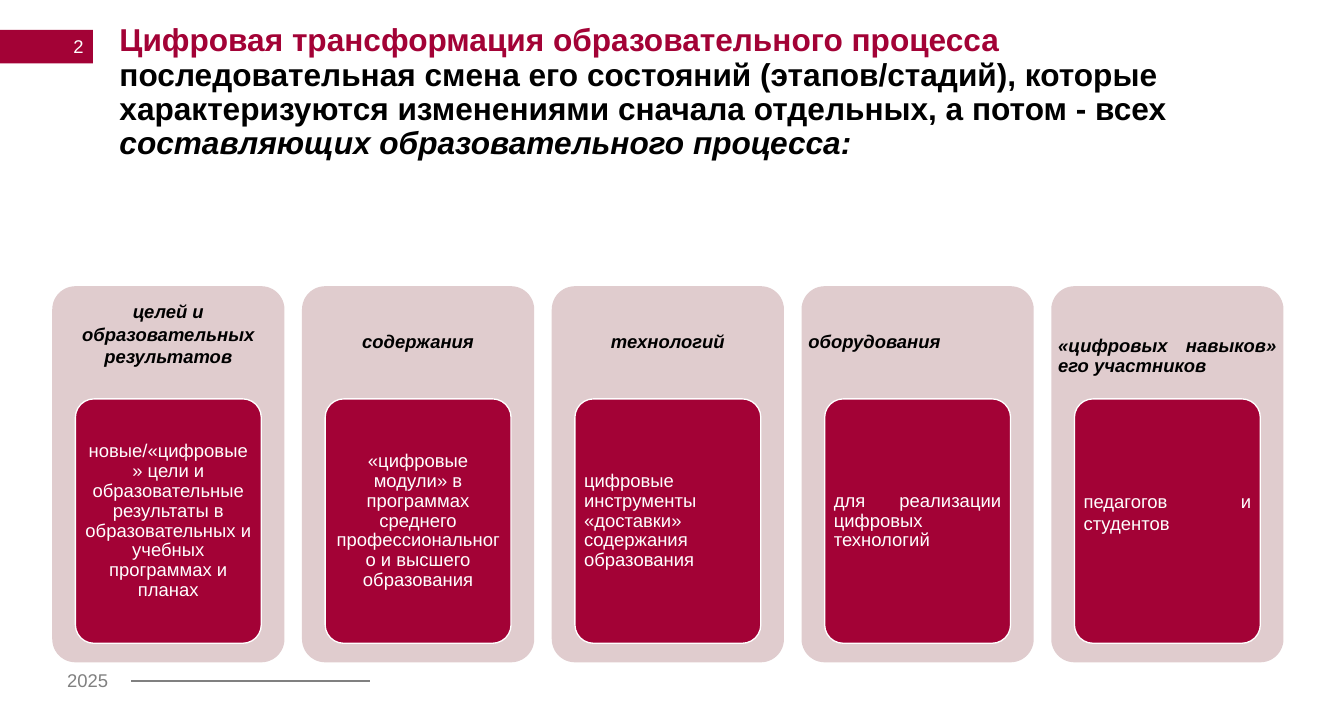
import pptx
import pptx.util
import pptx.dml.color
import pptx.enum.shapes
import pptx.enum.text
import pptx.oxml.xmlchemy

Cm = pptx.util.Cm
Pt = pptx.util.Pt
SHAPES = pptx.enum.shapes.MSO_SHAPE
ALIGN = pptx.enum.text.PP_ALIGN
ANCHOR = pptx.enum.text.MSO_ANCHOR
CRIMSON, ROSE, GREY, BLACK, WHITE = "A30236", "E0CCCE", "808080", "000000", "FFFFFF"


def rgb(value):
    return pptx.dml.color.RGBColor.from_string(value)


def write(owner, runs, align, spacing, margins, anchor=ANCHOR.MIDDLE):
    frame = owner.text_frame
    left, top, right, bottom = [Cm(margin) for margin in margins]
    layout = {"word_wrap": True, "auto_size": pptx.enum.text.MSO_AUTO_SIZE.NONE,
              "vertical_anchor": anchor, "margin_left": left, "margin_top": top,
              "margin_right": right, "margin_bottom": bottom}
    for key, value in layout.items():
        setattr(frame, key, value)
    paragraph = frame.paragraphs[0]
    for key, value in {"alignment": align, "line_spacing": spacing, "space_before": Pt(0)}.items():
        setattr(paragraph, key, value)
    for text, colour, style in runs:
        run = paragraph.add_run()
        run.text = text
        run.font.color.rgb = rgb(colour)
        for key, value in {"name": "Arial", "size": Pt(14), **style}.items():
            setattr(run.font, key, value)


deck = pptx.Presentation()
deck.slide_width, deck.slide_height = Cm(36), Cm(19)
slide = deck.slides.add_slide(deck.slide_layouts[5])
shapes = slide.shapes

number_bar = shapes.add_shape(SHAPES.RECTANGLE, 0, Cm(0.8), Cm(2.49), Cm(0.9))
number_bar.shadow.inherit = False
number_bar.fill.solid()
number_bar.fill.fore_color.rgb = rgb(CRIMSON)
number_bar.line.fill.background()
write(number_bar, [("2", WHITE, {})], ALIGN.RIGHT, 1.0, (0.25, 0, 0.25, 0))

year = shapes.add_textbox(Cm(1.55), Cm(17.81), Cm(1.7), Cm(0.86))
write(year, [("2025", GREY, {})], ALIGN.LEFT, 1.0, (0.25, 0.13, 0.2, 0.13), ANCHOR.TOP)

year_rule = shapes.add_connector(pptx.enum.shapes.MSO_CONNECTOR.STRAIGHT,
                                 Cm(3.51), Cm(18.26), Cm(9.91), Cm(18.26))
year_rule.line.color.rgb = rgb(GREY)
year_rule.line.width = Pt(1.5)
year_rule._element.spPr.append(pptx.oxml.xmlchemy.OxmlElement("a:effectLst"))

definition = shapes.title
for key, value in {"left": 3.2, "top": 0.66, "width": 28.58, "height": 2.44}.items():
    setattr(definition, key, Cm(value))
bold = {"size": Pt(24), "bold": True}
write(definition, [
    ("Цифровая трансформация образовательного процесса ", CRIMSON, bold),
    ("последовательная смена его состояний (этапов/стадий), которые характеризуются "
     "изменениями сначала отдельных, а потом - всех ", BLACK, bold),
    ("составляющих образовательного процесса:", BLACK, {**bold, "italic": True}),
], ALIGN.LEFT, 0.9, (0, 0, 0, 0), ANCHOR.TOP)

components = [
    {"heading": "целей и образовательных результатов", "heading_align": ALIGN.CENTER,
     "heading_spacing": 1.0, "heading_lift": 0.47,
     "change": "новые/«цифровые» цели и образовательные результаты в образовательных "
               "и учебных программах и планах", "change_align": ALIGN.CENTER},
    {"heading": "содержания", "heading_align": ALIGN.CENTER,
     "change": "«цифровые модули» в программах среднего профессионального "
               "и высшего образования", "change_align": ALIGN.CENTER},
    {"heading": "технологий", "heading_align": ALIGN.CENTER,
     "change": "цифровые инструменты «доставки» содержания образования"},
    {"heading": "оборудования",
     "change": "для реализации цифровых технологий"},
    {"heading": "«цифровых навыков» его участников", "heading_drop": 0.74,
     "change": "педагогов и студентов", "change_spacing": 1.0, "change_lift": 0.48},
]

for index, component in enumerate(components):
    left = 1.4 + 6.69 * index
    card = shapes.add_shape(SHAPES.ROUNDED_RECTANGLE, Cm(left), Cm(7.67), Cm(6.22), Cm(10.08))
    panel = shapes.add_shape(SHAPES.ROUNDED_RECTANGLE, Cm(left + 0.62), Cm(10.69), Cm(4.98), Cm(6.55))
    for box, fill in ((card, ROSE), (panel, CRIMSON)):
        box.shadow.inherit = False
        box.adjustments[0] = 0.1
        box.fill.solid()
        box.fill.fore_color.rgb = rgb(fill)
    card.line.fill.background()
    panel.line.color.rgb = rgb(WHITE)
    panel.line.width = Pt(1)
    write(card, [(component["heading"], BLACK, {"bold": True, "italic": True})],
          component.get("heading_align", ALIGN.JUSTIFY), component.get("heading_spacing", 0.9),
          (0, component.get("heading_drop", 0), 0, 7.06 + component.get("heading_lift", 0)))
    write(panel, [(component["change"], WHITE, {})],
          component.get("change_align", ALIGN.JUSTIFY), component.get("change_spacing", 0.9),
          (0.1, 0.08, 0.1, 0.08 + component.get("change_lift", 0)))

deck.save("out.pptx")
